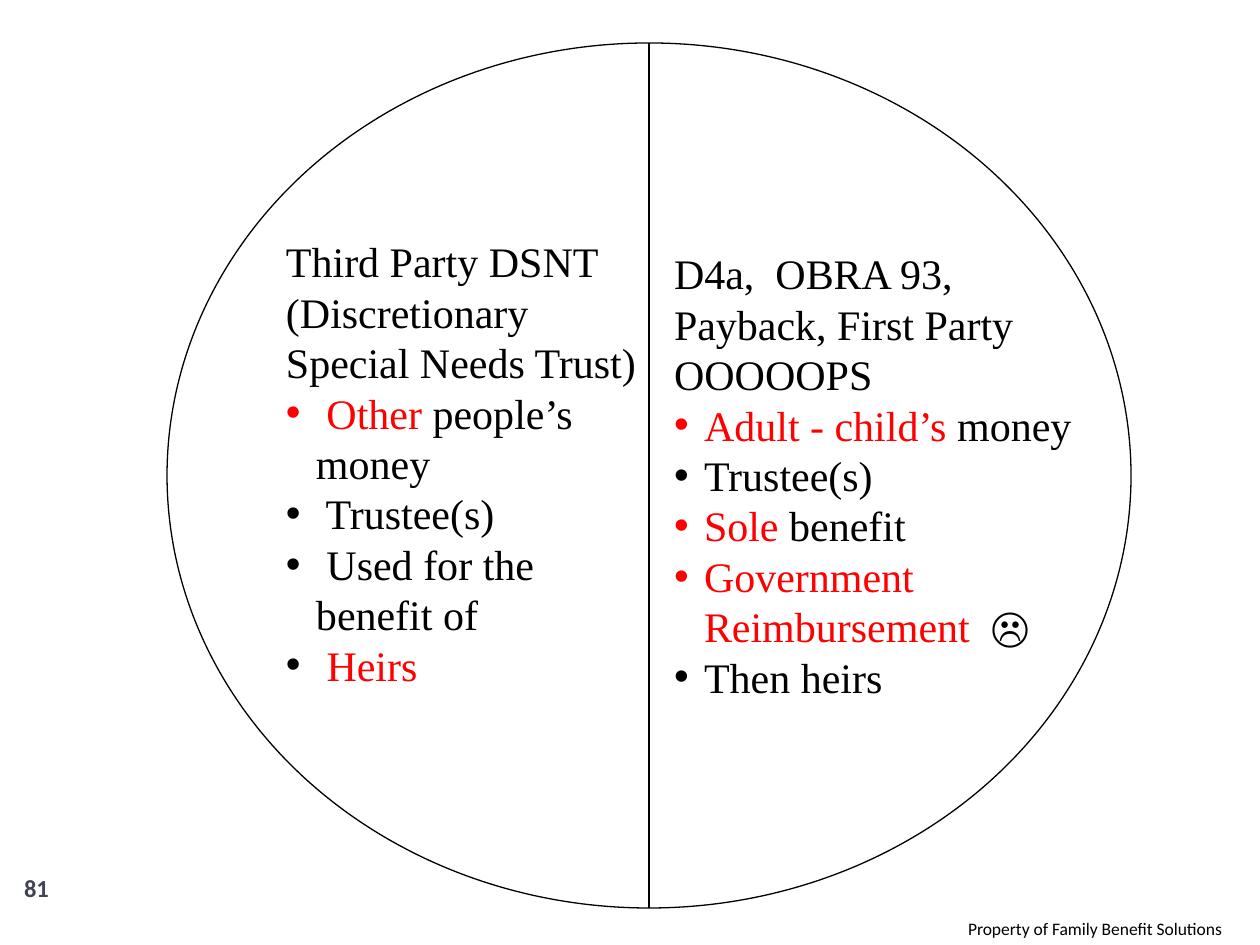
from lxml import etree
from pptx import Presentation
from pptx.dml.color import RGBColor
from pptx.enum.shapes import MSO_CONNECTOR, MSO_SHAPE
from pptx.enum.text import MSO_ANCHOR, MSO_AUTO_SIZE, PP_ALIGN
from pptx.oxml.ns import qn
from pptx.util import Emu, Pt

ELLIPSE, STRAIGHT = MSO_SHAPE.OVAL, MSO_CONNECTOR.STRAIGHT
TOP, MIDDLE = MSO_ANCHOR.TOP, MSO_ANCHOR.MIDDLE
LEFT, CENTER = PP_ALIGN.LEFT, PP_ALIGN.CENTER
NO_AUTOFIT = MSO_AUTO_SIZE.NONE

BLACK = RGBColor(0x00, 0x00, 0x00)
WHITE = RGBColor(0xFF, 0xFF, 0xFF)
RED = RGBColor(0xFF, 0x00, 0x00)
SLATE = RGBColor(0x42, 0x44, 0x56)

TWO_CONTENT = 3
INDENT = 30
LINE_PITCH = Pt(28.8)

# Each list item is a sequence of (text, colour) runs
THIRD_PARTY_HEAD = ["Third Party DSNT (Discretionary Special Needs Trust)"]
THIRD_PARTY_ITEMS = [
    [(" Other ", RED), ("people’s money", BLACK)],
    [(" Trustee(s)", BLACK)],
    [(" Used for the benefit of", BLACK)],
    [(" ", BLACK), ("Heirs", RED)],
]
FIRST_PARTY_HEAD = ["D4a,  OBRA 93,", "Payback, First Party", "OOOOOPS"]
FIRST_PARTY_ITEMS = [
    [("Adult - child’s ", RED), ("money", BLACK)],
    [("Trustee(s)", BLACK)],
    [("Sole", RED), (" benefit", BLACK)],
    [("Government Reimbursement  ", RED), ("☹", BLACK)],
    [("Then heirs", BLACK)],
]


def px(n):
    return Emu(n * 914400 // 126)


def place(sp, x, y, w, h):
    sp.left, sp.top, sp.width, sp.height = px(x), px(y), px(w), px(h)


def setup_frame(tf, anchor):
    tf.word_wrap = True
    tf.auto_size = NO_AUTOFIT
    tf.vertical_anchor = anchor
    tf.margin_left = tf.margin_right = tf.margin_top = tf.margin_bottom = 0


def set_font(font, name, size, color, bold=False):
    font.name, font.size, font.bold = name, Pt(size), bold
    font.color.rgb = color


def set_bullet(p, bulleted):
    pPr = p._p.get_or_add_pPr()
    indent = px(INDENT) if bulleted else 0
    pPr.set("marL", str(int(indent)))
    pPr.set("indent", str(-int(indent)))
    if bulleted:
        etree.SubElement(pPr, qn("a:buChar")).set("char", "•")
    else:
        etree.SubElement(pPr, qn("a:buNone"))


def fill_list(sp, box, head, items):
    place(sp, *box)
    tf = sp.text_frame
    setup_frame(tf, TOP)
    rows = [([(text, BLACK)], False) for text in head]
    rows += [(runs, True) for runs in items]
    for i, (runs, bulleted) in enumerate(rows):
        p = tf.add_paragraph() if i else tf.paragraphs[0]
        set_bullet(p, bulleted)
        p.alignment = LEFT
        p.space_before = Pt(0)
        p.line_spacing = LINE_PITCH
        for text, color in runs:
            r = p.add_run()
            r.text = text
            set_font(r.font, "Times New Roman", 24, color)


def add_label(slide, box, text, size, color, align, bold=False):
    sp = slide.shapes.add_textbox(*map(px, box))
    setup_frame(sp.text_frame, MIDDLE)
    p = sp.text_frame.paragraphs[0]
    p.text = text
    p.alignment = align
    set_font(p.runs[0].font, "Calibri", size, color, bold)


def add_split_circle(slide, x, y, w, h):
    circle = slide.shapes.add_shape(ELLIPSE, px(x), px(y), px(w), px(h))
    circle.shadow.inherit = False
    circle.fill.solid()
    circle.fill.fore_color.rgb = WHITE
    mid = px(x + w // 2)
    divider = slide.shapes.add_connector(STRAIGHT, mid, px(y), mid, px(y + h))
    etree.SubElement(divider._element.spPr, qn("a:effectLst"))
    for sp in (circle, divider):
        sp.line.color.rgb = BLACK
        sp.line.width = Pt(0.75)
    # Send behind the lists
    tree = circle._element.getparent()
    tree.insert(2, divider._element)
    tree.insert(2, circle._element)


def main():
    prs = Presentation()
    prs.slide_width, prs.slide_height = px(1260), px(945)
    slide = prs.slides.add_slide(prs.slide_layouts[TWO_CONTENT])
    title = slide.shapes.title._element
    title.getparent().remove(title)

    # Circle with one trust type in each half
    add_split_circle(slide, 167, 43, 964, 865)
    left, right = slide.placeholders
    fill_list(left, (286, 236, 353, 455), THIRD_PARTY_HEAD, THIRD_PARTY_ITEMS)
    fill_list(right, (674, 248, 406, 455), FIRST_PARTY_HEAD, FIRST_PARTY_ITEMS)

    # Page number and ownership line
    add_label(slide, (0, 861, 73, 53), "81", 14, SLATE, CENTER, bold=True)
    add_label(slide, (968, 917, 286, 22), "Property of Family Benefit Solutions",
              10, BLACK, LEFT)
    prs.save("out.pptx")


if __name__ == "__main__":
    main()
